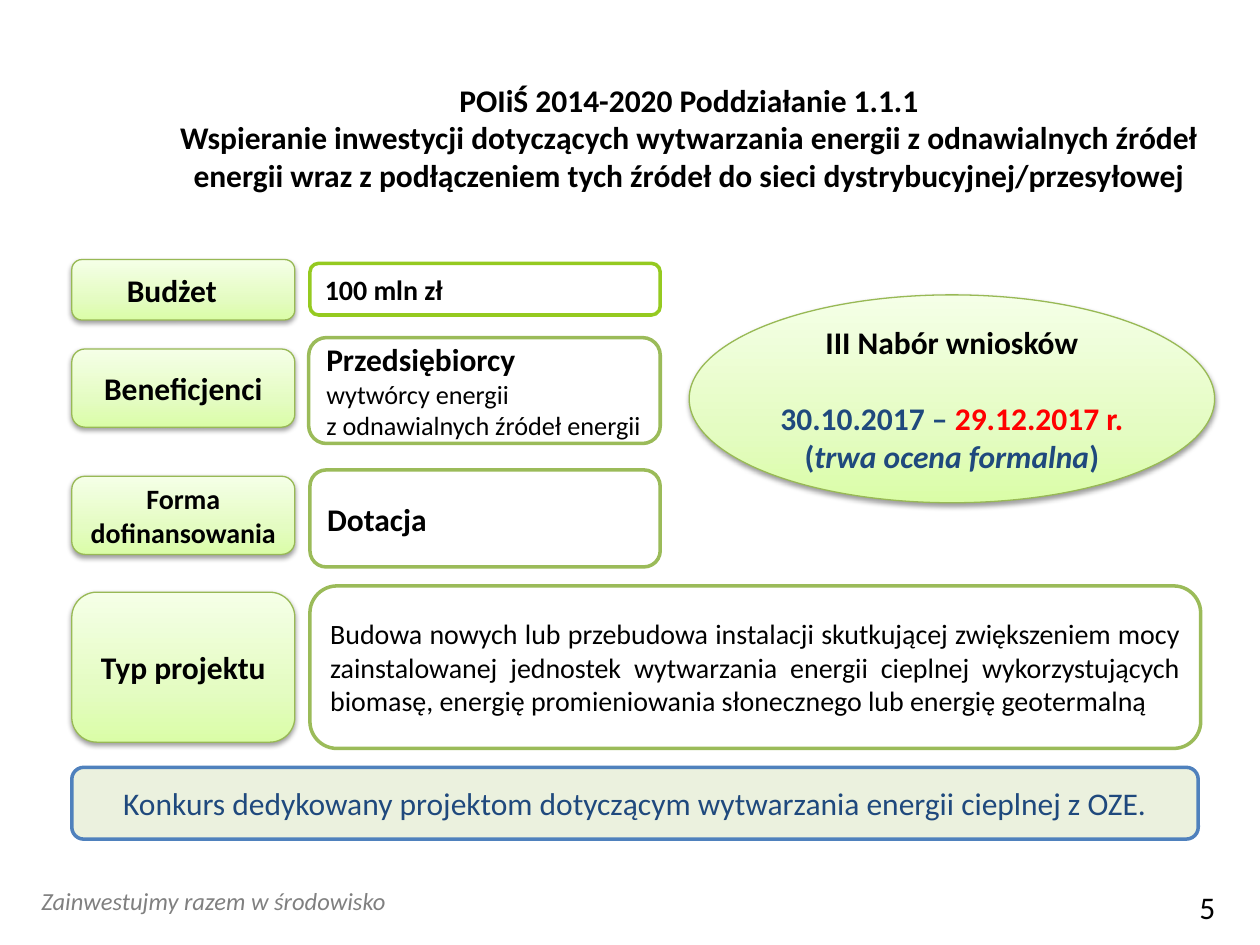
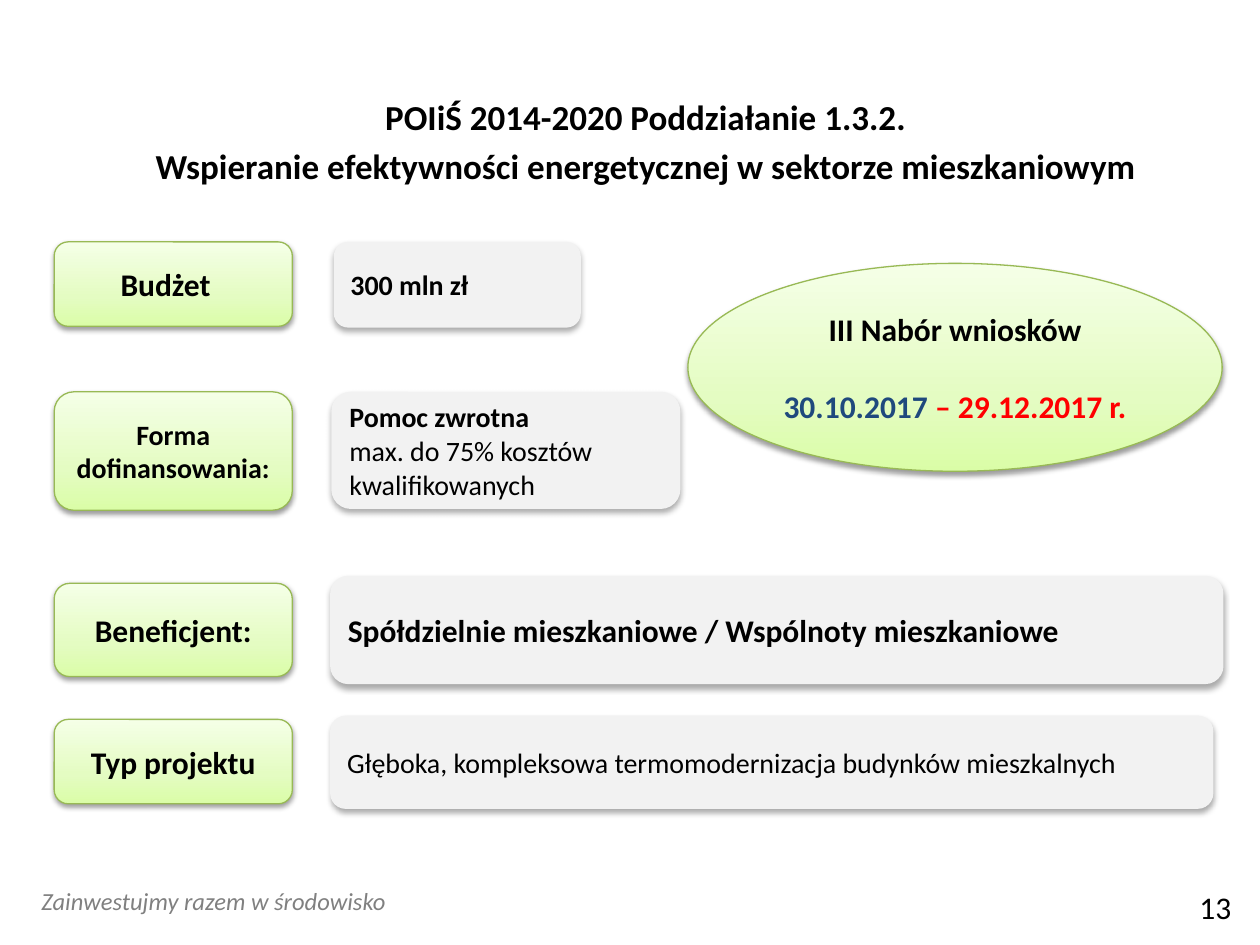
import copy
from dataclasses import dataclass

from lxml import etree
from pptx import Presentation
from pptx import util as u
from pptx.dml.color import RGBColor
from pptx.enum import shapes, text
from pptx.oxml import ns

LEFT = text.PP_ALIGN.LEFT
CENTER = text.PP_ALIGN.CENTER
JUSTIFY = text.PP_ALIGN.JUSTIFY
ROUNDED = shapes.MSO_SHAPE.ROUNDED_RECTANGLE
OVAL = shapes.MSO_SHAPE.OVAL


@dataclass(frozen=True)
class Theme:
    font: str = "Calibri"
    ink: str = "000000"
    muted: str = "808080"
    navy: str = "1F497D"
    red: str = "FF0000"
    white: str = "FFFFFF"
    gray: str = "F2F2F2"
    pale: str = "EBF1DE"
    lime: str = "95CA20"
    green: str = "9BBB59"
    edge: str = "98B955"
    blue: str = "4F81BD"
    glow: tuple = ((0, "DAFDA7"), (0.35, "E4FCC2"), (1, "F5FFE7"))
    label_shadow: tuple = (38, 3.1, 1.6)
    card_shadow: tuple = (32, 3.5, 2.2)
    large: int = 20
    normal: int = 18
    medium: int = 16
    small: int = 15
    footer: int = 14
    blank_line: int = 22


THEME = Theme()


@dataclass(frozen=True)
class Span:
    text: str
    size: int = THEME.normal
    bold: bool = False
    italic: bool = False
    color: str = THEME.ink


def strong(words, size=THEME.normal, color=THEME.ink, italic=False):
    return Span(words, size, True, italic, color)


def px(length):
    return u.Emu(length * 9144)


class Sheet:
    def __init__(self, theme):
        self.theme = theme
        self.deck = Presentation()
        self.deck.slide_width = px(1000)
        self.deck.slide_height = px(750)
        self.page = None

    def start_page(self, number):
        self.page = self.deck.slides.add_slide(self.deck.slide_layouts[6])
        motto = Span("Zainwestujmy razem w środowisko", self.theme.footer, italic=True, color=self.theme.muted)
        self.text_box((23, 698, 422, 34), [[motto]])
        self.text_box((942, 700, 59, 29), [[Span(str(number))]])

    def set_lines(self, box, lines, align):
        frame = box.text_frame
        frame.word_wrap = True
        for index, line in enumerate(lines):
            para = frame.paragraphs[0] if index == 0 else frame.add_paragraph()
            para.alignment = align
            for item in line:
                if item.text == "\v":
                    para.add_line_break()
                    continue
                span = para.add_run()
                span.text = item.text
                font = span.font
                font.name = self.theme.font
                font.size = u.Pt(item.size)
                font.bold = item.bold
                font.italic = item.italic
                font.color.rgb = RGBColor.from_string(item.color)

    def text_box(self, area, lines, align=LEFT):
        box = self.page.shapes.add_textbox(*map(px, area))
        self.set_lines(box, lines, align)
        return box

    def title(self, area, lines, size, spacing=None, after=None):
        box = self.text_box(area, [[strong(line, size)] for line in lines], CENTER)
        box.text_frame.auto_size = text.MSO_AUTO_SIZE.SHAPE_TO_FIT_TEXT
        for para in box.text_frame.paragraphs:
            para.line_spacing = spacing
            para.space_after = after

    def shape(self, kind, area, lines, align, line=None, width=2.0):
        box = self.page.shapes.add_shape(kind, *map(px, area))
        box.shadow.inherit = False
        if line:
            box.line.color.rgb = RGBColor.from_string(line)
            box.line.width = u.Pt(width)
        else:
            box.line.fill.background()
        box.text_frame.vertical_anchor = text.MSO_ANCHOR.MIDDLE
        self.set_lines(box, lines, align)
        return box

    def add_shadow(self, box, alpha, blur, distance):
        effects = box._element.spPr.find(ns.qn("a:effectLst"))
        shadow = etree.SubElement(
            effects, ns.qn("a:outerShdw"), blurRad=str(u.Pt(blur)), dist=str(u.Pt(distance)),
            dir="5400000", rotWithShape="0")
        color = etree.SubElement(shadow, ns.qn("a:srgbClr"), val=self.theme.ink)
        etree.SubElement(color, ns.qn("a:alpha"), val=str(alpha * 1000))

    def glowing(self, kind, area, lines):
        box = self.shape(kind, area, lines, CENTER, self.theme.edge, 0.75)
        box.fill.gradient()
        box.fill.gradient_angle = 90
        stops = box._element.spPr.find(".//" + ns.qn("a:gsLst"))
        stops.append(copy.deepcopy(stops[0]))
        for stop, (position, color) in zip(box.fill.gradient_stops, self.theme.glow):
            stop.position = position
            stop.color.rgb = RGBColor.from_string(color)
        self.add_shadow(box, *self.theme.label_shadow)
        return box

    def label(self, area, words, size=THEME.normal, right_inset=10):
        box = self.glowing(ROUNDED, area, [[strong(words, size)]])
        box.text_frame.margin_right = px(right_inset)

    def call_dates(self, area, *lines):
        box = self.glowing(OVAL, area, [[strong("III Nabór wniosków")], *lines])
        box.text_frame.paragraphs[1].space_before = u.Pt(self.theme.blank_line)

    def outlined(self, area, lines, align=LEFT, line=THEME.green, fill=THEME.white):
        box = self.shape(ROUNDED, area, lines, align, line)
        box.fill.solid()
        box.fill.fore_color.rgb = RGBColor.from_string(fill)

    def card(self, area, lines):
        box = self.shape(ROUNDED, area, lines, LEFT)
        box.fill.solid()
        box.fill.fore_color.rgb = RGBColor.from_string(self.theme.gray)
        self.add_shadow(box, *self.theme.card_shadow)


def renewable_sources(sheet):
    theme = sheet.theme
    sheet.start_page(5)
    for top, height, words, size, inset in (
        (206, 48, "Budżet", theme.normal, 28),
        (277, 62, "Beneficjenci", theme.normal, 10),
        (378, 62, "Forma dofinansowania", theme.medium, 10),
        (470, 119, "Typ projektu", theme.normal, 10),
    ):
        sheet.label((57, top, 177, height), words, size, inset)

    sheet.outlined((246, 209, 278, 41), [[strong("100 mln zł", theme.medium)]], line=theme.lime)
    sheet.outlined((245, 268, 279, 84), [
        [strong("Przedsiębiorcy")],
        [Span("wytwórcy energii", theme.small), Span("\v"),
         Span("z odnawialnych źródeł energii", theme.small)],
    ])
    sheet.outlined((246, 373, 278, 77), [[strong("Dotacja")]])
    sheet.outlined((246, 465, 707, 129), [[Span(
        "Budowa nowych lub przebudowa instalacji skutkującej zwiększeniem mocy "
        "zainstalowanej jednostek wytwarzania energii cieplnej wykorzystujących "
        "biomasę, energię promieniowania słonecznego lub energię geotermalną",
        theme.medium)]], JUSTIFY)
    sheet.outlined((57, 609, 894, 57), [[Span(
        "Konkurs dedykowany projektom dotyczącym wytwarzania energii cieplnej z OZE.",
        color=theme.navy)]], CENTER, theme.blue, theme.pale)
    sheet.call_dates(
        (547, 234, 417, 165),
        [strong("30.10.2017 – ", color=theme.navy), strong("29.12.2017 r.", color=theme.red)],
        [strong("(", color=theme.navy),
         strong("trwa ocena formalna", color=theme.navy, italic=True),
         strong(")", color=theme.navy)])
    sheet.title((106, 59, 882, 101), [
        "POIiŚ 2014-2020 Poddziałanie 1.1.1",
        "Wspieranie inwestycji dotyczących wytwarzania energii z odnawialnych źródeł "
        "energii wraz z podłączeniem tych źródeł do sieci dystrybucyjnej/przesyłowej",
    ], theme.normal)


def housing_efficiency(sheet):
    theme = sheet.theme
    sheet.start_page(13)
    for top, height, words, size, inset in (
        (192, 67, "Budżet", theme.normal, 22),
        (311, 94, "Forma dofinansowania:", theme.medium, 10),
        (463, 74, "Beneficjent:", theme.normal, 10),
        (571, 67, "Typ projektu", theme.normal, 10),
    ):
        sheet.label((43, top, 189, height), words, size, inset)

    sheet.card((265, 192, 196, 68), [[strong("300 mln zł", theme.medium)]])
    sheet.card((263, 311, 277, 93), [
        [strong("Pomoc zwrotna", theme.medium)],
        [Span("max. do 75% kosztów kwalifikowanych", theme.medium)],
    ])
    sheet.card((262, 457, 709, 86), [[strong("Spółdzielnie mieszkaniowe / Wspólnoty mieszkaniowe")]])
    sheet.card((262, 568, 701, 74), [[Span(
        "Głęboka, kompleksowa termomodernizacja budynków mieszkalnych", theme.medium)]])
    sheet.call_dates(
        (546, 209, 424, 165),
        [strong("30.10.2017 ", color=theme.navy), strong("– 29.12.2017 r.", color=theme.red)])
    sheet.title((28, 75, 969, 79), [
        "POIiŚ 2014-2020 Poddziałanie 1.3.2.",
        "Wspieranie efektywności energetycznej w sektorze mieszkaniowym",
    ], theme.large, 0.9, u.Pt(6))


def main():
    sheet = Sheet(THEME)
    renewable_sources(sheet)
    housing_efficiency(sheet)
    sheet.deck.save("out.pptx")


if __name__ == "__main__":
    main()
